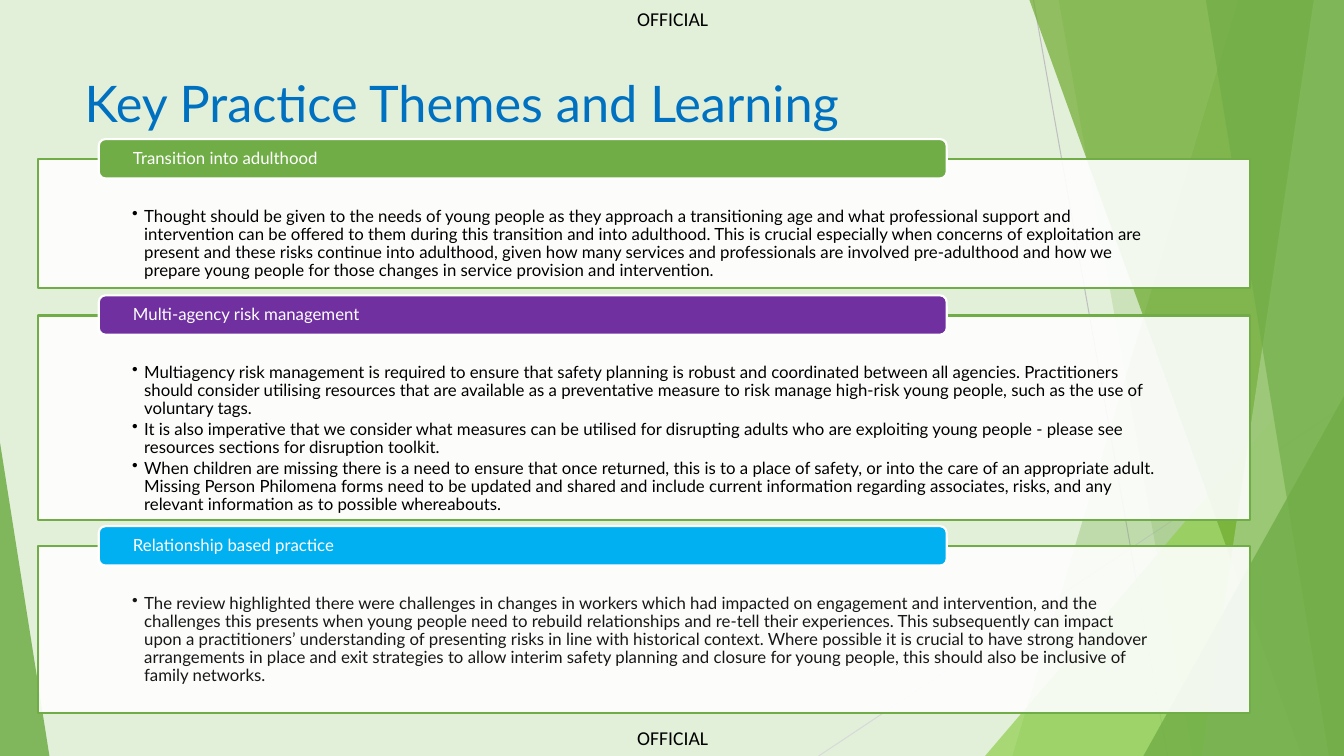
from dataclasses import dataclass

from lxml.etree import SubElement
from pptx import Presentation
from pptx.dml.color import RGBColor
from pptx.enum.shapes import MSO_CONNECTOR as Link, MSO_SHAPE as Kind
from pptx.enum.text import MSO_ANCHOR as Anchor, PP_ALIGN as Align
from pptx.oxml.ns import qn
from pptx.shapes.autoshape import Shape
from pptx.util import Pt

PX = 9144
WIDE, HIGH = 1333, 750
HUES = {
    "back": "E2F0D9",
    "green": "70AD47",
    "moss": "6EAA2E",
    "lime": "92D050",
    "sage": "A9D18E",
    "grey": "BFBFBF",
    "pale": "D9D9D9",
    "title": "0070C0",
    "purple": "7030A0",
    "sky": "00B0F0",
    "white": "FFFFFF",
    "black": "000000",
    "ink": "171717",
}


@dataclass
class Ray:
    start: tuple[int, int]
    end: tuple[int, int]
    hue: str


@dataclass
class Facet:
    top: int
    foot: int
    hue: str
    alpha: int


@dataclass
class Wedge:
    box: tuple[int, int, int, int]
    tip: int
    hue: str
    alpha: int


@dataclass
class Theme:
    name: str
    top: int
    height: int
    hue: str
    points: list[str]
    ink: str = "black"


RAYS = [
    Ray((1025, 0), (1158, HIGH), "grey"),
    Ray((WIDE, 403), (812, HIGH), "pale"),
]
DECOR = [
    Facet(1228, 1004, "green", 30),
    Facet(1050, 1183, "green", 20),
    Wedge((977, 333, 356, 417), 1, "lime", 72),
    Facet(1021, 1291, "moss", 70),
    Facet(1303, 1192, "sage", 70),
    Facet(1196, 1318, "green", 65),
    Wedge((1134, 393, 199, 357), 1, "green", 80),
    Wedge((0, 439, 49, 311), 0, "green", 85),
]
THEMES = [
    Theme("Transition into adulthood", 158, 128, "green", [
        "Thought should be given to the needs of young people as they approach a transitioning age "
        "and what professional support and intervention can be offered to them during this transition "
        "and into adulthood. This is crucial especially when concerns of exploitation are present and "
        "these risks continue into adulthood, given how many services and professionals are involved "
        "pre-adulthood and how we prepare young people for those changes in service provision and "
        "intervention.",
    ]),
    Theme("Multi-agency risk management", 313, 203, "purple", [
        "Multiagency risk management is required to ensure that safety planning is robust and "
        "coordinated between all agencies. Practitioners should consider utilising resources that are "
        "available as a preventative measure to risk manage high-risk young people, such as the use of "
        "voluntary tags.",
        "It is also imperative that we consider what measures can be utilised for disrupting adults "
        "who are exploiting young people - please see resources sections for disruption toolkit.",
        "When children are missing there is a need to ensure that once returned, this is to a place of "
        "safety, or into the care of an appropriate adult. Missing Person Philomena forms need to be "
        "updated and shared and include current information regarding associates, risks, and any "
        "relevant information as to possible whereabouts.",
    ]),
    Theme("Relationship based practice", 542, 165, "sky", [
        "The review highlighted there were challenges in changes in workers which had impacted on "
        "engagement and intervention, and the challenges this presents when young people need to "
        "rebuild relationships and re-tell their experiences. This subsequently can impact upon a "
        "practitioners’ understanding of presenting risks in line with historical context. Where "
        "possible it is crucial to have strong handover arrangements in place and exit strategies to "
        "allow interim safety planning and closure for young people, this should also be inclusive of "
        "family networks.",
    ], "ink"),
]

deck = Presentation()
deck.slide_width, deck.slide_height = WIDE * PX, HIGH * PX
slide = deck.slides.add_slide(deck.slide_layouts[6])


def scale(*sizes: int) -> list[int]:
    return [size * PX for size in sizes]


def tint(name: str) -> RGBColor:
    return RGBColor.from_string(HUES[name])


def paint(shape: Shape, hue: str, alpha: int = 100, edge: str = "") -> None:
    shape.shadow.inherit = False
    shape.fill.solid()
    shape.fill.fore_color.rgb = tint(hue)
    if alpha < 100:
        color = shape.fill._xPr.find(f".//{qn('a:srgbClr')}")
        SubElement(color, qn("a:alpha"), val=str(alpha * 1000))
    if edge:
        shape.line.color.rgb = tint(edge)
        shape.line.width = Pt(1.5)
    else:
        shape.line.fill.background()


def write(shape: Shape, texts: list[str], *, hue: str, size: int = 12, font: str = "Lato",
          inset: tuple[int, int, int, int] = (0, 0, 0, 0), anchor: Anchor = Anchor.TOP,
          lead: float = 1.0, after: float = 0, bullet: bool = False) -> None:
    frame = shape.text_frame
    frame.word_wrap = True
    frame.vertical_anchor = anchor
    (frame.margin_left, frame.margin_top,
     frame.margin_right, frame.margin_bottom) = scale(*inset)
    for i, text in enumerate(texts):
        para = frame.add_paragraph() if i else frame.paragraphs[0]
        para.alignment = Align.LEFT
        para.line_spacing = lead
        para.space_after = Pt(after)
        run = para.add_run()
        run.text = text
        run.font.size, run.font.name = Pt(size), font
        run.font.color.rgb = tint(hue)
        if bullet:
            props = para._p.get_or_add_pPr()
            props.set("marL", str(12 * PX))
            props.set("indent", str(-12 * PX))
            SubElement(props, qn("a:buChar"), char="•")


def draw_ray(ray: Ray) -> None:
    line = slide.shapes.add_connector(Link.STRAIGHT, *scale(*ray.start, *ray.end))
    line.line.color.rgb = tint(ray.hue)
    line.line.width = Pt(0.75)
    SubElement(line._element.spPr, qn("a:effectLst"))


def draw_decor(part: Facet | Wedge) -> None:
    if isinstance(part, Facet):
        pen = slide.shapes.build_freeform(part.top, 0, scale=PX)
        pen.add_line_segments([(WIDE, 0), (WIDE, HIGH), (part.foot, HIGH)], close=True)
        shape = pen.convert_to_shape()
    else:
        shape = slide.shapes.add_shape(Kind.ISOSCELES_TRIANGLE, *scale(*part.box))
        shape.adjustments[0] = part.tip
    paint(shape, part.hue, part.alpha)


def draw_theme(theme: Theme) -> None:
    panel = slide.shapes.add_shape(Kind.RECTANGLE, *scale(38, theme.top, 1202, theme.height))
    paint(panel, "white", 90, "green")
    write(panel, theme.points, hue=theme.ink, inset=(93, 48, 93, 0),
          lead=0.9, after=1.8, bullet=True)
    tab = slide.shapes.add_shape(Kind.ROUNDED_RECTANGLE, *scale(98, theme.top - 20, 841, 39))
    paint(tab, theme.hue, edge="white")
    write(tab, [theme.name], hue="white", inset=(32, 0, 32, 0), anchor=Anchor.MIDDLE, lead=0.9)


def main() -> None:
    slide.background.fill.solid()
    slide.background.fill.fore_color.rgb = tint("back")
    for ray in RAYS:
        draw_ray(ray)
    for part in DECOR:
        draw_decor(part)
    for top in (7, 720):
        mark = slide.shapes.add_textbox(*scale(632, top, 74, 23))
        write(mark, ["OFFICIAL"], hue="black", size=14, font="Calibri")
    title = slide.shapes.add_textbox(*scale(74, 67, 940, 86))
    write(title, ["Key Practice Themes and Learning"], hue="title", size=36, inset=(10, 5, 10, 5))
    for theme in THEMES:
        draw_theme(theme)
    deck.save("out.pptx")


if __name__ == "__main__":
    main()
